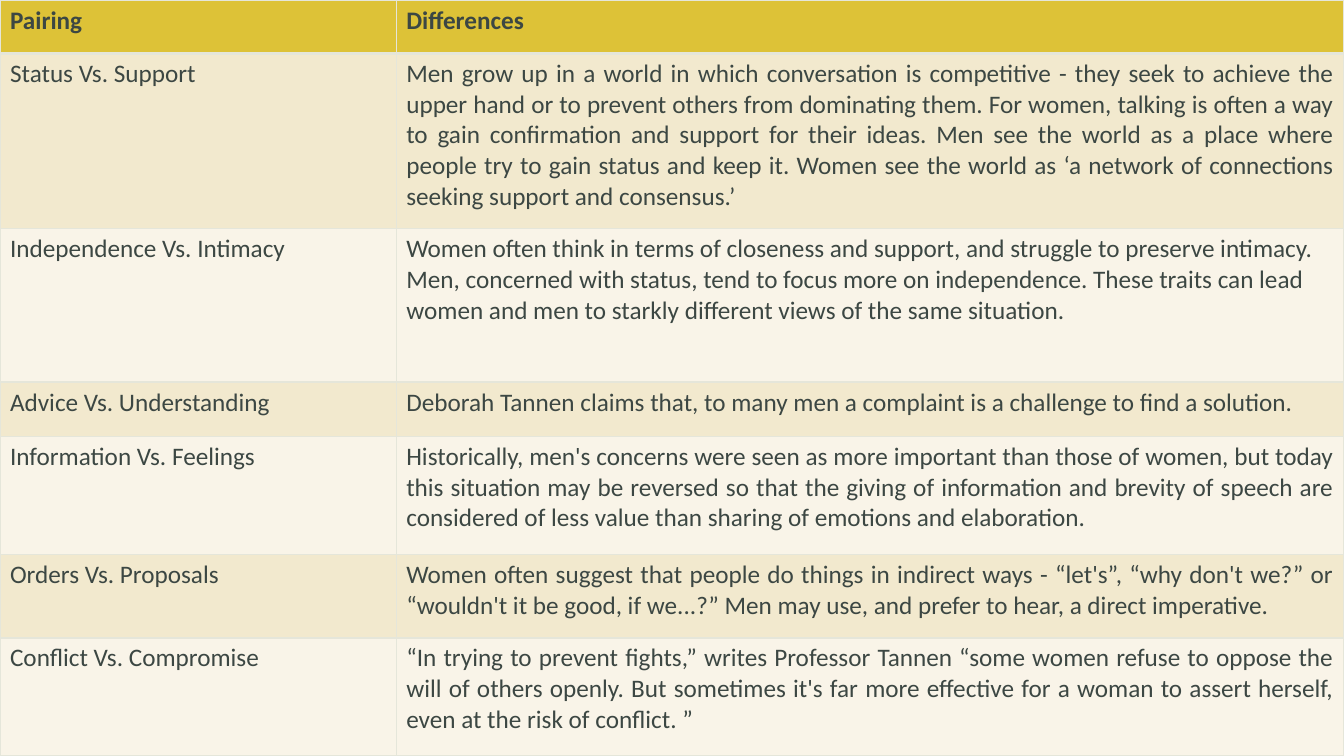
from dataclasses import dataclass

from lxml import etree
from pptx import Presentation
from pptx import util as u
from pptx.dml.color import RGBColor
from pptx.enum import text
from pptx.oxml import ns

GOLD, SAND, CREAM = "DDC237", "F2E9CE", "F9F4E8"
INK, EDGE = "3C4743", "E5E6DA"
COLS = [3.93, 9.4]


@dataclass
class Row:
    pair: str
    body: str
    high: float
    just: bool = True


ROWS = [
    Row("Pairing", "Differences", 0.53),
    Row("Status Vs. Support",
        "Men grow up in a world in which conversation is competitive - they seek to "
        "achieve the upper hand or to prevent others from dominating them. For women, "
        "talking is often a way to gain confirmation and support for their ideas. Men "
        "see the world as a place where people try to gain status and keep it. Women see "
        "the world as ‘a network of connections seeking support and consensus.’", 1.74),
    Row("Independence Vs. Intimacy",
        "Women often think in terms of closeness and support, and struggle to preserve "
        "intimacy. Men, concerned with status, tend to focus more on independence. These "
        "traits can lead women and men to starkly different views of the same situation.",
        1.52, just=False),
    Row("Advice Vs. Understanding",
        "Deborah Tannen claims that, to many men a complaint is a challenge to find a "
        "solution.", 0.54),
    Row("Information Vs. Feelings",
        "Historically, men's concerns were seen as more important than those of women, "
        "but today this situation may be reversed so that the giving of information and "
        "brevity of speech are considered of less value than sharing of emotions and "
        "elaboration.", 1.17),
    Row("Orders Vs. Proposals",
        "Women often suggest that people do things in indirect ways - “let's”, “why don't "
        "we?” or “wouldn't it be good, if we...?” Men may use, and prefer to hear, a "
        "direct imperative.", 0.83),
    Row("Conflict Vs. Compromise",
        "“In trying to prevent fights,” writes Professor Tannen “some women refuse to "
        "oppose the will of others openly. But sometimes it's far more effective for a "
        "woman to assert herself, even at the risk of conflict. ”", 1.17),
]


def paint(fill, tone: str) -> None:
    fill.solid()
    fill.fore_color.rgb = RGBColor.from_string(tone)


def write(frame, words: str, *, bold: bool = False, just: bool = False) -> None:
    para = frame.paragraphs[0]
    para.alignment = text.PP_ALIGN.JUSTIFY if just else text.PP_ALIGN.LEFT
    run = para.add_run()
    run.text = words
    run.font.name, run.font.size, run.font.bold = "Calibri", u.Pt(18), bold
    run.font.color.rgb = RGBColor.from_string(INK)


def edge(cell, side: str, wide: float) -> None:
    props = cell._tc.get_or_add_tcPr()
    line = etree.SubElement(props, ns.qn(f"a:ln{side}"), w=str(u.Pt(wide)))
    fill = etree.SubElement(line, ns.qn("a:solidFill"))
    etree.SubElement(fill, ns.qn("a:srgbClr"), val=EDGE)


def draw(slide) -> None:
    high = sum(row.high for row in ROWS)
    table = slide.shapes.add_table(len(ROWS), len(COLS), 0, 0,
                                   u.Inches(sum(COLS)), u.Inches(high)).table
    for col, wide in zip(table.columns, COLS):
        col.width = u.Inches(wide)
    for i, row in enumerate(ROWS):
        table.rows[i].height = u.Inches(row.high)
        tone = GOLD if i == 0 else SAND if i % 2 else CREAM
        for j, words in enumerate((row.pair, row.body)):
            cell = table.cell(i, j)
            write(cell.text_frame, words, bold=i == 0, just=j == 1 and row.just)
            # The rule under the header is thicker
            for side in "LRTB":
                heavy = (i, side) in ((0, "B"), (1, "T"))
                edge(cell, side, 3 if heavy else 1)
            paint(cell.fill, tone)


def main() -> None:
    deck = Presentation()
    deck.slide_width, deck.slide_height = u.Inches(13.33), u.Inches(7.5)
    # Blank layout: the table fills the slide
    slide = deck.slides.add_slide(deck.slide_layouts[6])
    paint(slide.background.fill, EDGE)
    draw(slide)
    deck.save("out.pptx")


if __name__ == "__main__":
    main()
